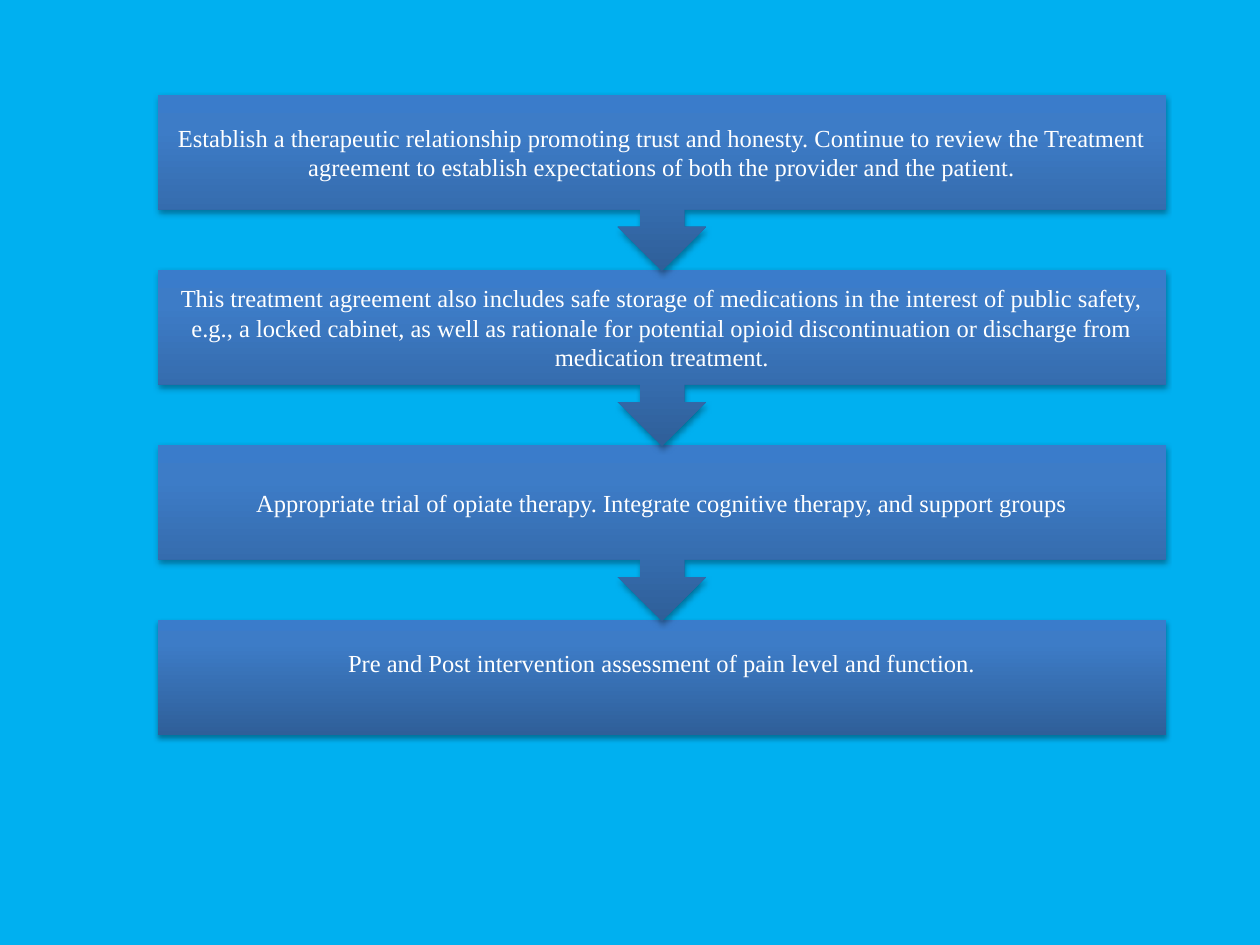
from dataclasses import dataclass

from lxml.etree import SubElement
from pptx import Presentation
from pptx.dml.color import RGBColor
from pptx.enum.shapes import MSO_SHAPE
from pptx.enum.text import MSO_ANCHOR, PP_ALIGN
from pptx.oxml.ns import qn
from pptx.slide import Slide
from pptx.util import Emu, Pt

SCALE = 914400 / 126
LEFT, TOP, WIDE = 158, 95, 1008
BOX, CALL, STEP = 115, 176, 175
PAD, LINE = 14, 29
STOPS = ((0, "2F5F99"), (80, "3D7CC7"), (100, "3A7CCB"))


@dataclass
class Stage:
    """One stage of the flow, with an arrow to the next unless last."""
    text: str
    last: bool = False


STAGES = (
    Stage("Establish a therapeutic relationship promoting trust and honesty. "
          "Continue to review the Treatment agreement to establish "
          "expectations of both the provider and the patient."),
    Stage("This treatment agreement also includes safe storage of medications "
          "in the interest of public safety, e.g., a locked cabinet, as well as "
          "rationale for potential opioid discontinuation or discharge from "
          "medication treatment."),
    Stage("Appropriate trial of opiate therapy. Integrate cognitive therapy, "
          "and support groups"),
    Stage("Pre and Post intervention assessment of pain level and function.",
          last=True),
)


def px(num: int) -> Emu:
    """Turn pixels into EMU."""
    return Emu(round(num * SCALE))


def color(code: str) -> RGBColor:
    """Turn a hex string into a colour."""
    return RGBColor.from_string(code)


def draw_shape(slide: Slide, top: int, last: bool) -> None:
    """Draw a shaded block, pointing down unless it is the last."""
    kind = MSO_SHAPE.RECTANGLE if last else MSO_SHAPE.UP_ARROW_CALLOUT
    high = BOX if last else CALL
    shape = slide.shapes.add_shape(kind, px(LEFT), px(top), px(WIDE), px(high))
    shape.rotation = 0 if last else 180
    props = shape.element.spPr
    grad = SubElement(props, qn("a:gradFill"), rotWithShape="0")
    stops = SubElement(grad, qn("a:gsLst"))
    for pos, code in STOPS:
        stop = SubElement(stops, qn("a:gs"), pos=str(pos * 1000))
        SubElement(stop, qn("a:srgbClr"), val=code)
    SubElement(grad, qn("a:lin"), ang="16200000", scaled="0")
    shape.line.fill.background()
    shape.shadow.inherit = False
    shade = SubElement(props.find(qn("a:effectLst")), qn("a:outerShdw"),
                       blurRad="40000", dist="23000", dir="5400000",
                       rotWithShape="0")
    tone = SubElement(shade, qn("a:srgbClr"), val="000000")
    SubElement(tone, qn("a:alpha"), val="35000")


def draw_text(slide: Slide, top: int, stage: Stage) -> None:
    """Write the wording of a stage over its block."""
    box = slide.shapes.add_textbox(px(LEFT), px(top), px(WIDE), px(BOX))
    frame = box.text_frame
    frame.word_wrap = True
    frame.vertical_anchor = MSO_ANCHOR.MIDDLE
    frame.margin_left = frame.margin_right = frame.margin_top = px(PAD)
    frame.margin_bottom = px(PAD + LINE if stage.last else PAD)
    para = frame.paragraphs[0]
    para.alignment = PP_ALIGN.CENTER
    run = para.add_run()
    run.text = stage.text
    run.font.name = "Times New Roman"
    run.font.size = Pt(14)
    run.font.color.rgb = color("FFFFFF")


def main() -> None:
    """Build the flow slide and save it."""
    deck = Presentation()
    deck.slide_width, deck.slide_height = px(1260), px(945)
    slide = deck.slides.add_slide(deck.slide_layouts[6])
    back = slide.background.fill
    back.solid()
    back.fore_color.rgb = color("00B0F0")
    for row, stage in reversed(list(enumerate(STAGES))):
        top = TOP + row * STEP
        draw_shape(slide, top, stage.last)
        draw_text(slide, top, stage)
    deck.save("out.pptx")


if __name__ == "__main__":
    main()
